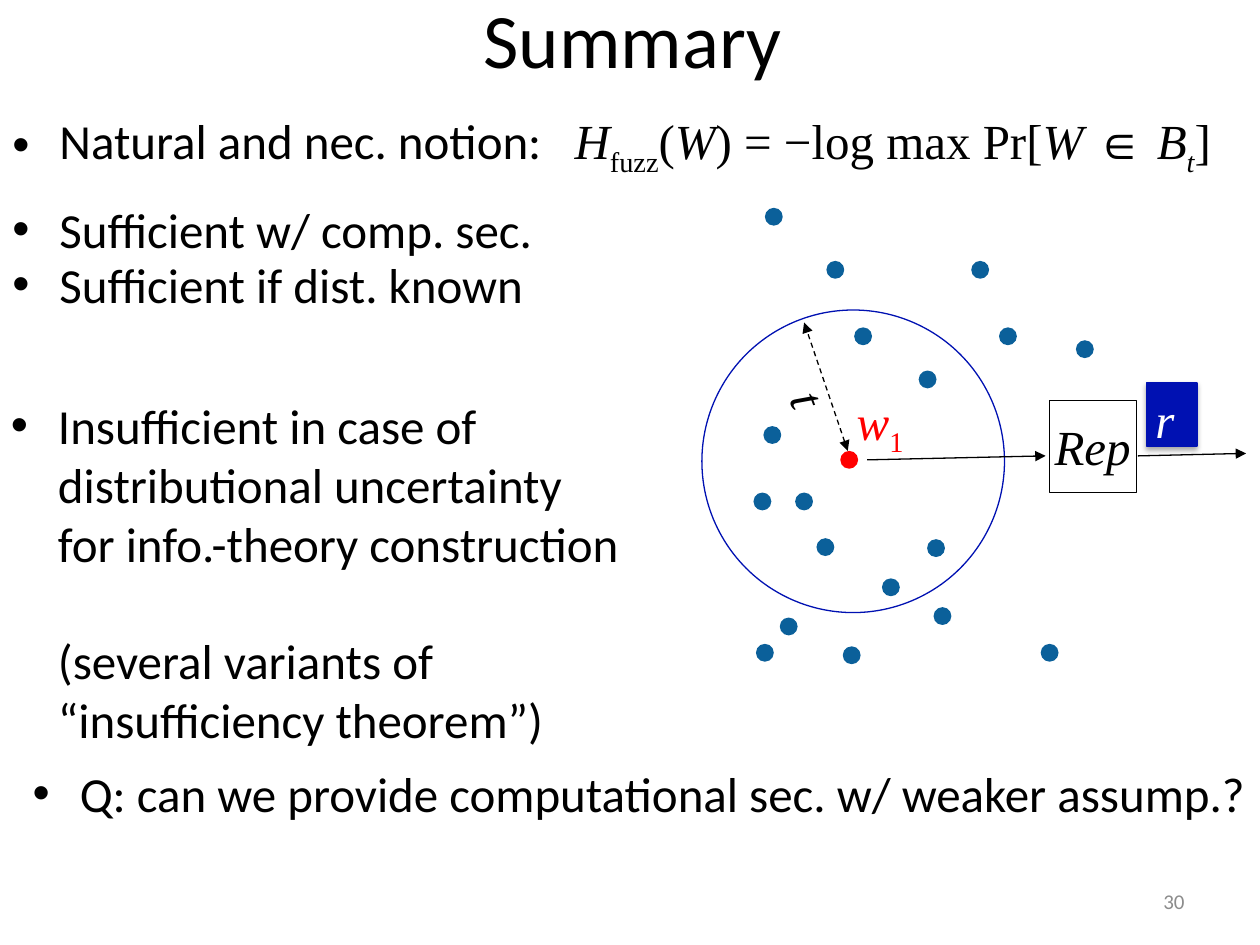
from dataclasses import dataclass

from lxml import etree
from pptx import Presentation
from pptx.dml.color import RGBColor
from pptx.enum.dml import MSO_LINE
from pptx.enum.shapes import MSO_CONNECTOR, MSO_SHAPE
from pptx.enum.text import MSO_ANCHOR, MSO_AUTO_SIZE, PP_ALIGN
from pptx.oxml.ns import qn
from pptx.util import Cm, Pt

OVAL, RECT, TRAPEZOID = MSO_SHAPE.OVAL, MSO_SHAPE.RECTANGLE, MSO_SHAPE.TRAPEZOID
STRAIGHT = MSO_CONNECTOR.STRAIGHT
DASH = MSO_LINE.DASH
CENTER, RIGHT = PP_ALIGN.CENTER, PP_ALIGN.RIGHT
TOP, MIDDLE = MSO_ANCHOR.TOP, MSO_ANCHOR.MIDDLE
GROW = MSO_AUTO_SIZE.SHAPE_TO_FIT_TEXT


@dataclass(frozen=True)
class Theme:
    """Colours, fonts and type sizes of the slide."""
    black: str = "000000"
    white: str = "FFFFFF"
    red: str = "FF0000"
    blue: str = "0011B2"
    dot: str = "0B609A"
    grey: str = "8C8C8C"
    sans: str = "Calibri"
    serif: str = "Times New Roman"
    title: int = 44
    body: int = 28
    number: int = 12
    line: float = 0.75


T = Theme()
ITALIC = {"font": T.serif, "italic": True}
ROMAN = {"font": T.serif}
SUB = {"font": T.serif, "sub": True}

DOT_SIZE = 0.36
DOTS = [
    (15.39, 8.59), (17.22, 6.6), (19.58, 5.26), (16.99, 13.03), (20.98, 12.98),
    (15.42, 4.19), (21.69, 6.86), (15.24, 12.98), (18.69, 10.87), (20.14, 6.6),
    (15.72, 12.45), (18.82, 12.24), (16.66, 5.26), (17.78, 11.66),
    (16.03, 9.93), (16.46, 10.85), (15.19, 9.93), (18.52, 7.47),
]
FORMULA = [
    ("Natural and nec. notion:   ", {}), ("H", ITALIC), ("fuzz", SUB),
    ("(", ROMAN), ("W", ITALIC), (") = −log max Pr[", ROMAN), ("W ", ITALIC),
    ("∈ ", ROMAN), ("B", ITALIC), ("t", {**SUB, "italic": True}), ("]", ROMAN),
]
INSUFFICIENT = (
    "Insufficient in case of\ndistributional uncertainty\n"
    "for info.-theory construction\n\n"
    "(several variants of \n“insufficiency theorem”)"
)
BULLETS = [
    ((0, 2.11, 27.41, 1.45), FORMULA),
    ((0, 3.89, 13.41, 1.45), [("Sufficient w/ comp. sec.", {})]),
    ((0, 5, 12.4, 2.64), [("Sufficient if dist. known", {})]),
    ((-0.03, 7.85, 20.52, 7.44), [(INSUFFICIENT, {})]),
    ((0.41, 15.27, 27, 1.45),
     [("Q: can we provide computational sec. w/ weaker assump.?", {})]),
]


def format_font(font, name=T.sans, size=T.body, color=T.black, italic=False):
    """Set the face, size, colour and slant of a font."""
    font.name, font.size, font.italic = name, Pt(size), italic
    font.color.rgb = RGBColor.from_string(color)


def add_run(p, text, font=T.sans, size=T.body, color=T.black, italic=False, sub=False):
    """Append text to a paragraph, with a line break at each newline."""
    for i, line in enumerate(text.split("\n")):
        if i:
            p.add_line_break()
            br = p._p.findall(qn("a:br"))[-1]
            etree.SubElement(br, qn("a:rPr"), sz=str(size * 100))
        if line:
            r = p.add_run()
            r.text = line
            format_font(r.font, font, size, color, italic)
            if sub:
                r.font._element.set("baseline", "-25000")


def add_text(s, box, runs, wrap=False, rotation=0):
    """Add a text box that grows with its formatted runs."""
    sp = s.shapes.add_textbox(*map(Cm, box))
    sp.rotation = rotation
    tf = sp.text_frame
    tf.word_wrap, tf.auto_size, tf.vertical_anchor = wrap, GROW, TOP
    p = tf.paragraphs[0]
    for text, fmt in runs:
        add_run(p, text, **fmt)
    return sp


def add_bullet(s, box, runs):
    """Add a wrapped text box with one bulleted paragraph."""
    sp = add_text(s, box, runs, wrap=True)
    pPr = sp.text_frame.paragraphs[0]._p.get_or_add_pPr()
    pPr.set("marL", str(Cm(0.95)))
    pPr.set("indent", str(Cm(-0.95)))
    etree.SubElement(pPr, qn("a:buFont"), typeface="Arial")
    etree.SubElement(pPr, qn("a:buChar"), char="•")


def add_shape(s, kind, box, fill=None, line=None):
    """Add a preset shape with optional fill and outline."""
    sp = s.shapes.add_shape(kind, *map(Cm, box))
    sp.shadow.inherit = False
    if fill:
        sp.fill.solid()
        sp.fill.fore_color.rgb = RGBColor.from_string(fill)
    else:
        sp.fill.background()
    if line:
        sp.line.color.rgb = RGBColor.from_string(line)
        sp.line.width = Pt(T.line)
    else:
        sp.line.fill.background()
    return sp


def add_dot(s, x, y, color=T.dot):
    """Add one point of the distribution."""
    add_shape(s, OVAL, (x, y, DOT_SIZE, DOT_SIZE), fill=color)


def add_shadow(sp):
    """Give a shape a soft shadow straight below it."""
    effects = sp._element.spPr.find(qn("a:effectLst"))
    shadow = etree.SubElement(
        effects, qn("a:outerShdw"), blurRad=str(Pt(3.1)), dist=str(Pt(1.8)),
        dir="5400000", rotWithShape="0")
    color = etree.SubElement(shadow, qn("a:srgbClr"), val=T.black)
    etree.SubElement(color, qn("a:alpha"), val="35000")


def add_arrow(s, start, end, both=False, dash=None):
    """Add a straight arrow with a head at one end or both."""
    c = s.shapes.add_connector(STRAIGHT, *map(Cm, start + end))
    c.line.color.rgb = RGBColor.from_string(T.black)
    c.line.width = Pt(T.line)
    if dash:
        c.line.dash_style = dash
    ln = c.line._get_or_add_ln()
    for tag in ["a:headEnd", "a:tailEnd"] if both else ["a:tailEnd"]:
        etree.SubElement(ln, qn(tag), type="triangle")
    etree.SubElement(c._element.spPr, qn("a:effectLst"))


def add_title(s, text):
    """Place and format the title placeholder."""
    sp = s.shapes.title
    sp.left, sp.top, sp.width, sp.height = map(Cm, (0.41, -0.84, 24.69, 3.18))
    tf = sp.text_frame
    tf.vertical_anchor = MIDDLE
    p = tf.paragraphs[0]
    p.alignment = CENTER
    add_run(p, text, size=T.title)


def add_number(s, text):
    """Add the slide number at the lower right."""
    sp = s.shapes.add_textbox(*map(Cm, (18.21, 17.65, 5.92, 1.02)))
    tf = sp.text_frame
    tf.word_wrap, tf.vertical_anchor = True, MIDDLE
    p = tf.paragraphs[0]
    p.alignment = RIGHT
    add_run(p, text, size=T.number, color=T.grey)


def add_diagram(s):
    """Draw the ball of radius t around w1 and the reproduce step."""
    add_shape(s, OVAL, (14.15, 6.25, 6.1, 6.1), line=T.blue)
    for x, y in DOTS:
        add_dot(s, x, y)
    add_text(s, (17.02, 7.77, 1.63, 1.45),
             [("w", {**ITALIC, "color": T.red}), ("1", {**SUB, "color": T.red})])
    add_dot(s, 16.94, 9.09, T.red)
    add_arrow(s, (17.48, 9.27), (21.08, 9.19))
    add_arrow(s, (22.94, 9.19), (25.12, 9.14))
    add_shadow(add_shape(s, RECT, (23.11, 7.72, 1.02, 1.27), T.blue, T.blue))
    add_text(s, (23.04, 7.72, 1.24, 1.45), [("r", {**ITALIC, "color": T.white})])
    rep = add_shape(s, TRAPEZOID, (21.11, 8.13, 1.85, 1.75), line=T.black)
    rep.adjustments[0] = 0
    rep.rotation = 90
    add_text(s, (21.01, 8.28, 2.44, 1.45), [("Rep", ITALIC)])
    add_arrow(s, (17.09, 9.09), (16.21, 6.5), both=True, dash=DASH)
    add_text(s, (15.75, 7.24, 1.09, 1.45), [(" ", ROMAN), ("t", ITALIC)], rotation=69.7)


def main():
    """Build the summary slide and save it."""
    prs = Presentation()
    prs.slide_width, prs.slide_height = Cm(25.4), Cm(19.05)
    s = prs.slides.add_slide(prs.slide_layouts[5])
    add_title(s, "Summary")
    add_diagram(s)
    for box, runs in BULLETS:
        add_bullet(s, box, runs)
    add_number(s, "30")
    prs.save("out.pptx")


if __name__ == "__main__":
    main()
